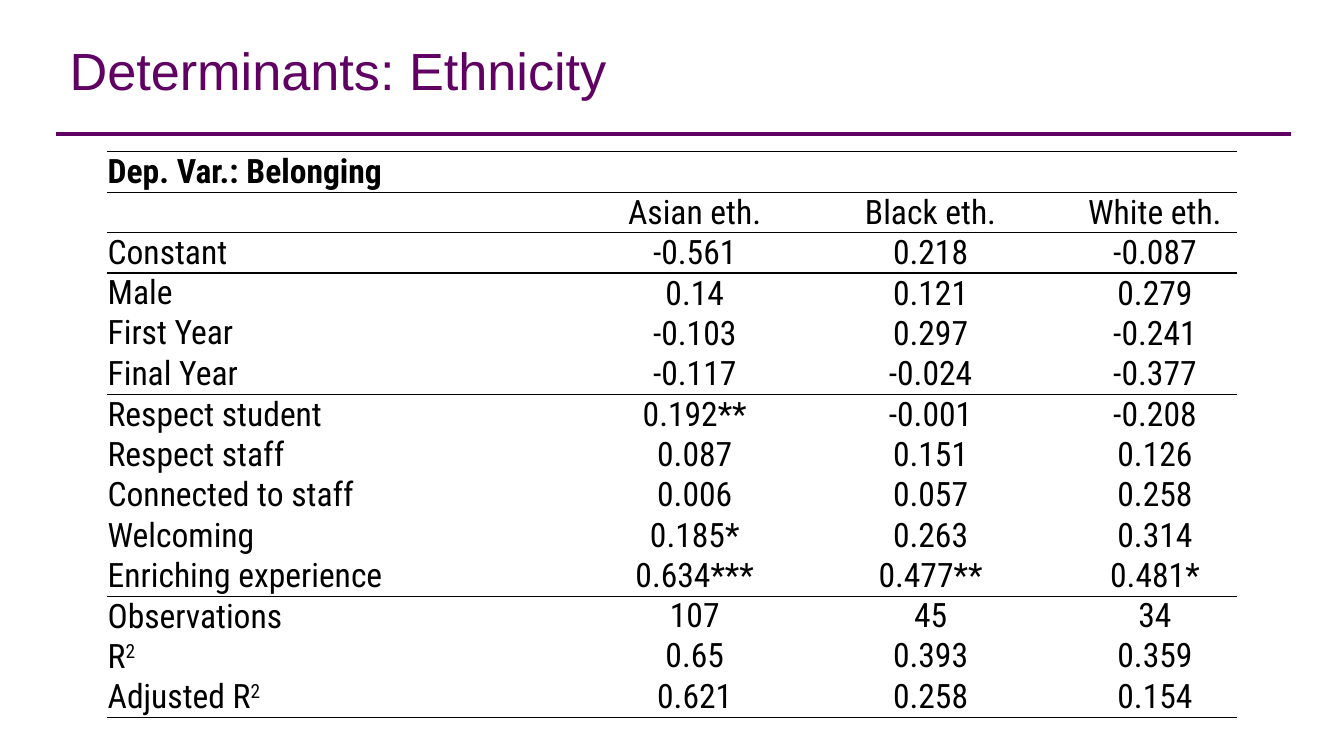
from dataclasses import dataclass

from lxml import etree
from pptx import Presentation
from pptx import util as u
from pptx.dml.color import RGBColor
from pptx.enum import shapes, text
from pptx.oxml.ns import qn

PURPLE = RGBColor(0x60, 0x00, 0x63)
BLACK = RGBColor(0x00, 0x00, 0x00)
TITLE_FONT = "Arial"
TABLE_FONT = "Roboto Condensed"
MIDDLE = text.MSO_ANCHOR.MIDDLE
BOTTOM = text.MSO_ANCHOR.BOTTOM

COLUMN_WIDTHS = (264.96, 100.08, 152.64, 87.84)
ROW_HEIGHT = 21.6
THIN = 0.5


@dataclass(frozen=True)
class Row:
    label: str
    values: tuple[str, ...]
    rule_below: float = 0
    label_anchor: text.MSO_ANCHOR = BOTTOM
    value_anchor: text.MSO_ANCHOR = BOTTOM
    exponent: str = ""
    bold: bool = False


ROWS = (
    Row("Dep. Var.: Belonging", ("", "", ""), THIN, bold=True),
    Row("", ("Asian eth.", "Black eth.", "White eth."), THIN),
    Row("Constant", ("-0.561", "0.218", "-0.087"), 1, MIDDLE),
    Row("Male", ("0.14", "0.121", "0.279"), 0, MIDDLE),
    Row("First Year", ("-0.103", "0.297", "-0.241"), 0, MIDDLE),
    Row("Final Year", ("-0.117", "-0.024", "-0.377"), THIN, MIDDLE),
    Row("Respect student", ("0.192**", "-0.001", "-0.208")),
    Row("Respect staff", ("0.087", "0.151", "0.126")),
    Row("Connected to staff", ("0.006", "0.057", "0.258")),
    Row("Welcoming", ("0.185*", "0.263", "0.314")),
    Row("Enriching experience", ("0.634***", "0.477**", "0.481*"), THIN),
    Row("Observations", ("107", "45", "34"), value_anchor=MIDDLE),
    Row("R", ("0.65", "0.393", "0.359"), value_anchor=MIDDLE, exponent="2"),
    Row("Adjusted R", ("0.621", "0.258", "0.154"), THIN, value_anchor=MIDDLE, exponent="2"),
)


def style_run(run, font: str, size: float, color: RGBColor, bold: bool = False) -> None:
    run.font.name = font
    run.font.size = u.Pt(size)
    run.font.color.rgb = color
    run.font.bold = bold


def add_title(page, wording: str) -> None:
    box = page.shapes.add_textbox(u.Pt(30.24), u.Pt(16.56), u.Pt(648), u.Pt(48.24))
    frame = box.text_frame
    frame.word_wrap = True
    frame.vertical_anchor = MIDDLE
    frame.margin_bottom = u.Pt(10.6)
    frame.text = wording
    style_run(frame.paragraphs[0].runs[0], TITLE_FONT, 28, PURPLE)


def add_title_rule(page) -> None:
    rule = page.shapes.add_connector(
        shapes.MSO_CONNECTOR.STRAIGHT, u.Pt(30.24), u.Pt(72), u.Pt(691.7), u.Pt(72)
    )
    rule.line.color.rgb = PURPLE
    rule.line.width = u.Pt(2.25)
    etree.SubElement(rule._element.spPr, qn("a:effectLst"))


def set_borders(cell, top: float, bottom: float) -> None:
    properties = cell._tc.get_or_add_tcPr()
    for side, width in (("L", 0), ("R", 0), ("T", top), ("B", bottom)):
        line = etree.SubElement(properties, qn(f"a:ln{side}"), w=str(u.Pt(width)))
        if width:
            fill = etree.SubElement(line, qn("a:solidFill"))
            etree.SubElement(fill, qn("a:srgbClr"), val=str(BLACK))
        else:
            etree.SubElement(line, qn("a:noFill"))


def fill_cell(cell, wording: str, row: Row, is_label: bool, rule_above: float) -> None:
    set_borders(cell, rule_above, row.rule_below)
    cell.fill.background()
    cell.margin_left = cell.margin_right = u.Pt(0.5)
    cell.margin_top = cell.margin_bottom = u.Pt(0)
    cell.vertical_anchor = row.label_anchor if is_label else row.value_anchor
    para = cell.text_frame.paragraphs[0]
    if not wording:
        etree.SubElement(para._p, qn("a:endParaRPr"), sz="1200")
        return
    para.text = wording
    para.alignment = text.PP_ALIGN.LEFT if is_label else text.PP_ALIGN.CENTER
    if is_label and row.exponent:
        span = para.add_run()
        span.text = row.exponent
        span._r.get_or_add_rPr().set("baseline", "30000")
    for run in para.runs:
        style_run(run, TABLE_FONT, 18, BLACK, row.bold)


def add_results(page, rows: tuple[Row, ...]) -> None:
    table = page.shapes.add_table(
        len(rows), len(COLUMN_WIDTHS), u.Pt(57.2), u.Pt(81.36),
        u.Pt(sum(COLUMN_WIDTHS)), u.Pt(ROW_HEIGHT * len(rows)),
    ).table
    table.first_row = False
    table.horz_banding = False
    for column, width in zip(table.columns, COLUMN_WIDTHS):
        column.width = u.Pt(width)
    rule_above = THIN
    for row_index, row in enumerate(rows):
        table.rows[row_index].height = u.Pt(ROW_HEIGHT)
        for column_index, wording in enumerate((row.label, *row.values)):
            cell = table.cell(row_index, column_index)
            fill_cell(cell, wording, row, column_index == 0, rule_above)
        rule_above = row.rule_below


def main() -> None:
    deck = Presentation()
    deck.slide_width = u.Pt(720)
    deck.slide_height = u.Pt(405)
    page = deck.slides.add_slide(deck.slide_layouts[6])
    add_title_rule(page)
    add_title(page, "Determinants: Ethnicity")
    add_results(page, ROWS)
    deck.save("out.pptx")


if __name__ == "__main__":
    main()
